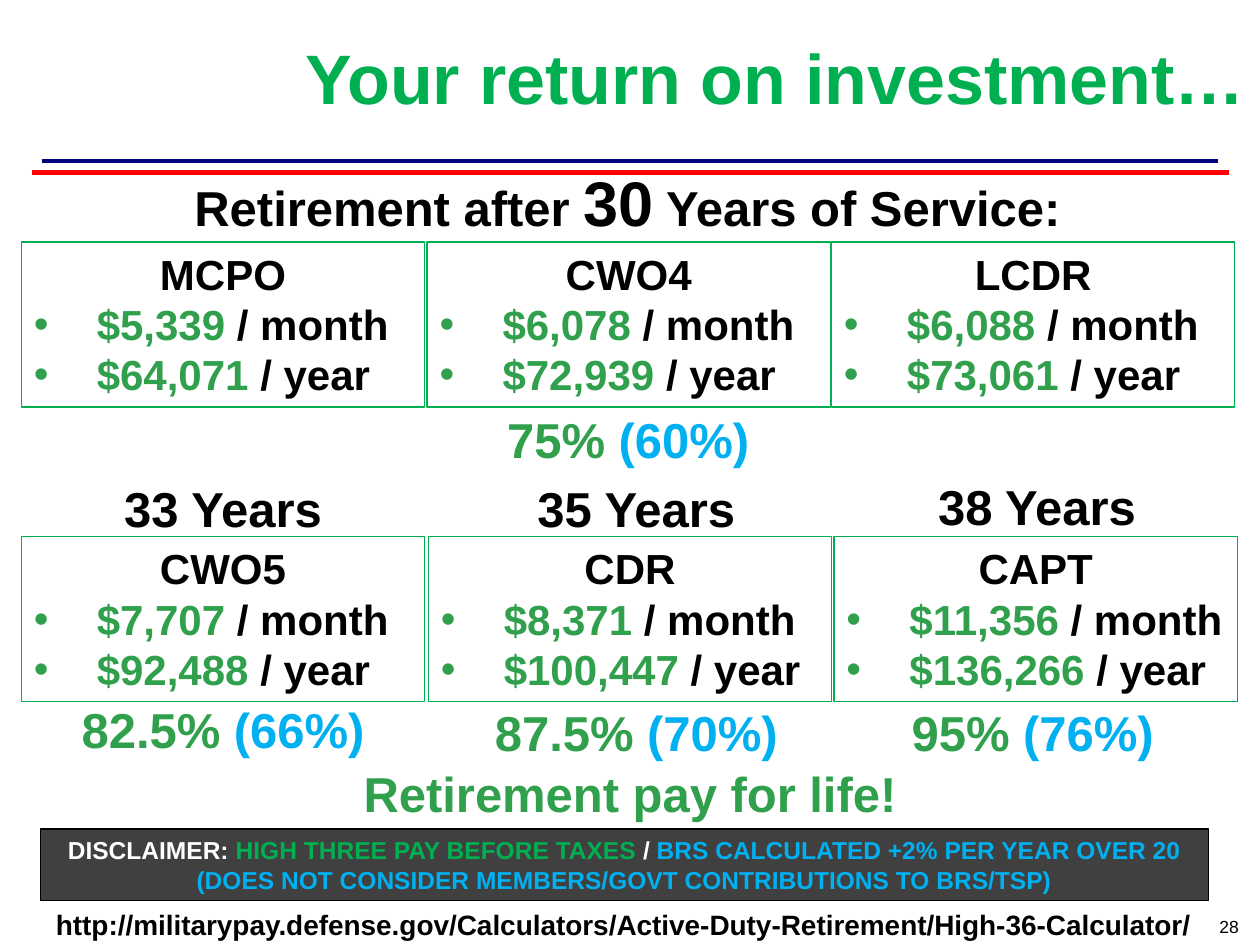
from lxml.etree import SubElement
from pptx import Presentation
from pptx.dml.color import RGBColor
from pptx.enum.shapes import MSO_CONNECTOR, MSO_SHAPE
from pptx.enum.text import MSO_ANCHOR, MSO_AUTO_SIZE, PP_ALIGN
from pptx.oxml.ns import qn
from pptx.util import Inches, Pt

BLACK, WHITE, GREEN, MONEY, BLUE = "000000", "FFFFFF", "00B050", "30A04D", "00B0F0"
BOX_W, BOX_H = 3.2, 1.31


def color(hex_code):
    return RGBColor.from_string(hex_code)


def write(paragraph, parts, size, align=PP_ALIGN.CENTER, bold=True):
    """Fill a paragraph with (text, colour[, own size]) runs."""
    paragraph.alignment = align
    paragraph.font.name = "Arial"
    paragraph.font.size = Pt(size)
    paragraph.font.bold = bold
    for text, hex_code, *own_size in parts:
        run = paragraph.add_run()
        run.text = text
        run.font.color.rgb = color(hex_code)
        if own_size:
            run.font.size = Pt(own_size[0])


prs = Presentation()
prs.slide_width, prs.slide_height = Inches(10), Inches(7.5)
slide = prs.slides.add_slide(prs.slide_layouts[5])
shapes = slide.shapes

# Title
title = shapes.title
title.left, title.top, title.width, title.height = map(Inches, (0.98, 0.22, 9, 0.77))
title.text_frame.auto_size = MSO_AUTO_SIZE.NONE
title.text_frame.vertical_anchor = MSO_ANCHOR.BOTTOM
heading = title.text_frame.paragraphs[0]
heading.line_spacing = 0.85
write(heading, [("Your return on investment…", GREEN)], 40, PP_ALIGN.RIGHT)

# Double rule under the title
for inset, y, hex_code in [(0.33, 1.28, "000080"), (0.25, 1.37, "FF0000")]:
    rule = shapes.add_connector(MSO_CONNECTOR.STRAIGHT, Inches(inset), Inches(y),
                                Inches(10 - inset), Inches(y))
    rule.line.color.rgb = color(hex_code)
    rule.line.width = Pt(2.5)
    SubElement(rule._element.spPr, qn("a:effectLst"))

# Pay boxes: left, top, rank, monthly pay, yearly pay
pay_boxes = [
    (0.17, 1.92, "MCPO", "$5,339", "$64,071"),
    (3.39, 1.92, "CWO4", "$6,078", "$72,939"),
    (6.6, 1.92, "LCDR", "$6,088", "$73,061"),
    (0.17, 4.26, "CWO5", "$7,707", "$92,488"),
    (3.4, 4.26, "CDR", "$8,371", "$100,447"),
    (6.62, 4.26, "CAPT", "$11,356", "$136,266"),
]
for left, top, rank, monthly, yearly in pay_boxes:
    pay_box = shapes.add_shape(MSO_SHAPE.RECTANGLE, *map(Inches, (left, top, BOX_W, BOX_H)))
    pay_box.shadow.inherit = False
    pay_box.fill.background()
    pay_box.line.color.rgb = color(GREEN)
    pay_box.line.width = Pt(0.75)
    frame = pay_box.text_frame
    frame.word_wrap = True
    frame.auto_size = MSO_AUTO_SIZE.SHAPE_TO_FIT_TEXT
    frame.vertical_anchor = MSO_ANCHOR.TOP
    write(frame.paragraphs[0], [(rank, BLACK)], 24)
    for amount, period in [(monthly, "month"), (yearly, "year")]:
        item = frame.add_paragraph()
        props = item._p.get_or_add_pPr()
        props.set("marL", str(Inches(0.5)))
        props.set("indent", str(Inches(-0.5)))
        bullet_color = SubElement(props, qn("a:buClr"))
        SubElement(bullet_color, qn("a:srgbClr"), val=MONEY)
        SubElement(props, qn("a:buFont"), typeface="Arial")
        SubElement(props, qn("a:buChar"), char="•")
        write(item, [(amount + " ", MONEY), ("/ " + period, BLACK)], 24, PP_ALIGN.LEFT)

# Disclaimer bar
disclaimer = shapes.add_shape(MSO_SHAPE.RECTANGLE, *map(Inches, (0.32, 6.58, 9.27, 0.57)))
disclaimer.shadow.inherit = False
disclaimer.fill.solid()
disclaimer.fill.fore_color.rgb = color("404040")
disclaimer.line.color.rgb = color(BLACK)
disclaimer.line.width = Pt(0.75)
disclaimer.text_frame.word_wrap = True
disclaimer.text_frame.auto_size = MSO_AUTO_SIZE.SHAPE_TO_FIT_TEXT
disclaimer.text_frame.vertical_anchor = MSO_ANCHOR.TOP
write(disclaimer.text_frame.paragraphs[0], [
    ("DISCLAIMER: ", WHITE),
    ("HIGH THREE PAY BEFORE TAXES ", GREEN),
    ("/ ", WHITE),
    ("BRS CALCULATED +2% PER YEAR OVER 20 "
     "(DOES NOT CONSIDER MEMBERS/GOVT CONTRIBUTIONS TO BRS/TSP)", BLUE),
], 14)

# Captions: position, wrapping, size, runs
captions = [
    ((0.98, 1.25, 8, 0.5), True, 28,
     [("Retirement after ", BLACK), ("30", BLACK, 36), (" Years of Service:", BLACK)]),
    ((0.77, 3.75, 2, 0.5), True, 28, [("33 Years", BLACK)]),
    ((4.05, 3.75, 2, 0.5), True, 28, [("35 Years", BLACK)]),
    ((7.23, 3.73, 2, 0.5), True, 28, [("38 Years", BLACK)]),
    ((3.91, 3.2, 2.15, 0.57), False, 28, [("75% ", MONEY), ("(60%)", BLUE)]),
    ((0.53, 5.5, 2.48, 0.57), False, 28, [("82.5% ", MONEY), ("(66%)", BLUE)]),
    ((3.81, 5.53, 2.48, 0.57), False, 28, [("87.5% ", MONEY), ("(70%)", BLUE)]),
    ((7.12, 5.53, 2.15, 0.57), False, 28, [("95% ", MONEY), ("(76%)", BLUE)]),
    ((2.76, 6.01, 4.48, 0.57), False, 28, [("Retirement pay for life!", MONEY)]),
    ((0.27, 7.15, 9.36, 0.37), True, 16,
     [("http://militarypay.defense.gov/Calculators/Active-Duty-Retirement/"
       "High-36-Calculator/", BLACK)]),
]
for place, wraps, size, parts in captions:
    caption = shapes.add_textbox(*map(Inches, place)).text_frame
    caption.word_wrap = wraps
    caption.auto_size = MSO_AUTO_SIZE.SHAPE_TO_FIT_TEXT
    write(caption.paragraphs[0], parts, size)

# Slide number
page_number = shapes.add_textbox(*map(Inches, (9.2, 7.22, 0.73, 0.28))).text_frame
page_number.word_wrap = True
write(page_number.paragraphs[0], [("28", BLACK)], 10, PP_ALIGN.RIGHT, bold=False)

prs.save("out.pptx")
